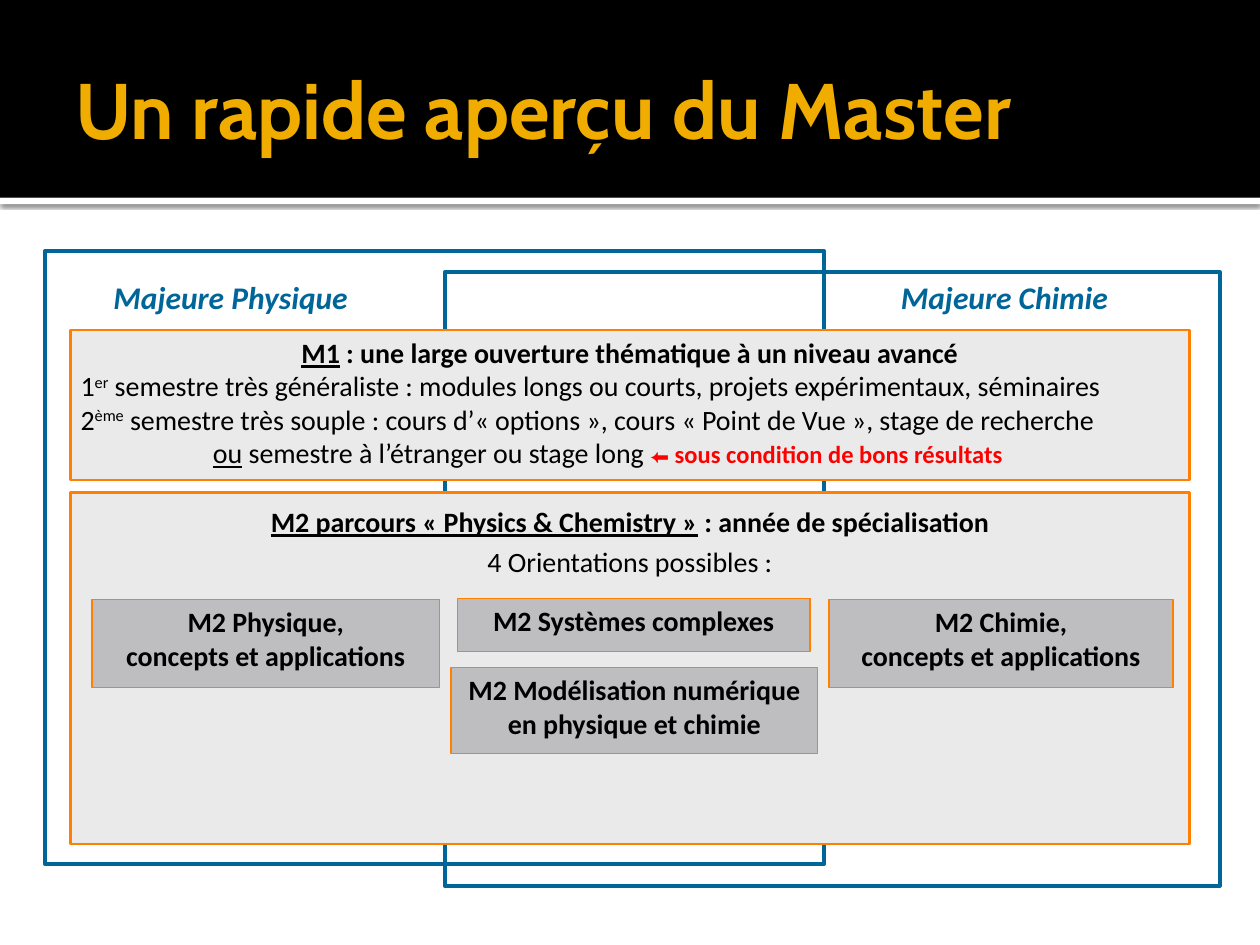
from lxml import etree
from pptx import Presentation
from pptx.dml.color import RGBColor
from pptx.enum.shapes import MSO_SHAPE
from pptx.enum.text import MSO_ANCHOR, PP_ALIGN
from pptx.oxml import parse_xml
from pptx.util import Inches, Pt

RECT = MSO_SHAPE.RECTANGLE
TOP, MIDDLE = MSO_ANCHOR.TOP, MSO_ANCHOR.MIDDLE
LEFT, CENTER = PP_ALIGN.LEFT, PP_ALIGN.CENTER
BLACK = RGBColor(0, 0, 0)
WHITE = RGBColor(255, 255, 255)
GOLD = RGBColor(0xF0, 0xAD, 0x00)
BLUE = RGBColor(0x00, 0x66, 0x99)
ORANGE = RGBColor(0xFF, 0x80, 0x00)
RED = RGBColor(255, 0, 0)
PALE = RGBColor(0xEA, 0xEA, 0xEA)
GRAY = RGBColor(0xBE, 0xBE, 0xC1)
SHADOW = (
    '<a:effectLst xmlns:a="http://schemas.openxmlformats.org/drawingml/2006/main">'
    '<a:outerShdw blurRad="31750" dist="10160" dir="5400000" rotWithShape="0">'
    '<a:srgbClr val="000000"><a:alpha val="60000"/></a:srgbClr>'
    '</a:outerShdw></a:effectLst>'
)

deck = Presentation()
deck.slide_width, deck.slide_height = Inches(10), Inches(7.5)
slide = deck.slides.add_slide(deck.slide_layouts[6])


def add_box(place, fill=None, line=None, width=0):
    box = slide.shapes.add_shape(RECT, *[Inches(n) for n in place])
    box.shadow.inherit = False
    if fill is None:
        box.fill.background()
    else:
        box.fill.solid()
        box.fill.fore_color.rgb = fill
    if line is None:
        box.line.fill.background()
    else:
        box.line.color.rgb = line
        box.line.width = Pt(width)
    frame = box.text_frame
    frame.word_wrap = True
    frame.vertical_anchor = TOP
    frame.margin_left = frame.margin_right = Inches(0.08)
    frame.margin_top = frame.margin_bottom = Inches(0.04)
    return box


def add_text(par, text, size=16, bold=True, color=BLACK, align=CENTER, name="Calibri"):
    par.text = text
    par.alignment = align
    font = par.font
    font.name, font.size, font.bold = name, Pt(size), bold
    font.color.rgb = color


band = add_box((0, 1.57, 10, 0.05), WHITE)
props = band.element.spPr
for old in props.findall("{*}effectLst"):
    props.remove(old)
props.append(parse_xml(SHADOW))
add_box((0, 0, 10, 1.57), BLACK)

title = slide.shapes.add_textbox(Inches(0.5), Inches(0.17), Inches(9), Inches(1.37))
frame = title.text_frame
frame.word_wrap = True
frame.vertical_anchor = MIDDLE
frame.margin_right = Inches(0.05)
add_text(frame.paragraphs[0], "Un rapide aperçu du Master", 45, True, GOLD, LEFT, "Cabin")

for place in [(3.53, 2.16, 6.15, 4.87), (0.36, 1.99, 6.18, 4.87)]:
    add_box(place, None, BLUE, 2.25)

for left, width, text in [(0.82, 2.82, "Majeure Physique"), (7.07, 2.5, "Majeure Chimie")]:
    label = slide.shapes.add_textbox(Inches(left), Inches(2.17), Inches(width), Inches(0.48))
    frame = label.text_frame
    frame.word_wrap = True
    frame.margin_left = frame.margin_right = Inches(0.08)
    frame.margin_top = frame.margin_bottom = Inches(0.04)
    par = frame.paragraphs[0]
    add_text(par, text, 18, True, BLUE, LEFT)
    par.font.italic = True

frame = add_box((0.56, 2.62, 8.88, 1.19), PALE, ORANGE, 1.5).text_frame
par = frame.paragraphs[0]
add_text(par, "M1")
par.runs[0].font.underline = True
par.add_run().text = "\u00a0: une large ouverture thématique à un niveau avancé"

terms = [
    ("1", "er", " semestre très généraliste : modules longs ou courts, projets expérimentaux, séminaires"),
    ("2", "ème", " semestre très souple : cours d’«\u00a0options\u00a0», cours «\u00a0Point de Vue\u00a0», stage de recherche"),
]
for digit, suffix, text in terms:
    par = frame.add_paragraph()
    add_text(par, digit, bold=False, align=LEFT)
    run = par.add_run()
    run.text = suffix
    run.font._element.set("baseline", "30000")
    par.add_run().text = text

par = frame.add_paragraph()
add_text(par, "ou", bold=False, align=LEFT)
par._p.get_or_add_pPr().set("marL", str(Inches(1.05)))
par.runs[0].font.underline = True
par.add_run().text = " semestre à l’étranger ou stage long"
notes = [
    (" ", 14, "Calibri", False),
    ("⬅", 11, "Arial", False),
    (" ", 14, "Calibri", False),
    ("sous condition de bons résultats", 14, "Calibri", True),
]
for text, size, name, bold in notes:
    run = par.add_run()
    run.text = text
    run.font.size, run.font.name, run.font.bold = Pt(size), name, bold
    run.font.color.rgb = RED

frame = add_box((0.56, 3.91, 8.88, 2.79), PALE, ORANGE, 1.5).text_frame
par = frame.paragraphs[0]
add_text(par, "M2 parcours «\u00a0Physics & Chemistry\u00a0»")
par.runs[0].font.underline = True
par.add_run().text = "\u00a0: année de spécialisation"
add_text(frame.add_paragraph(), "4 Orientations possibles :", bold=False)
for par in frame.paragraphs:
    par.line_spacing = 1.2

tracks = [
    ((0.73, 4.76, 2.76, 0.7), "M2 Physique,\vconcepts et applications"),
    ((6.58, 4.76, 2.73, 0.7), "M2 Chimie,\vconcepts et applications"),
    ((3.63, 4.75, 2.8, 0.42), "M2 Systèmes complexes"),
    ((3.58, 5.3, 2.91, 0.68), "M2 Modélisation numérique en physique et chimie"),
]
for place, text in tracks:
    box = add_box(place, GRAY, ORANGE, 0.75)
    add_text(box.text_frame.paragraphs[0], text)

deck.save("out.pptx")
